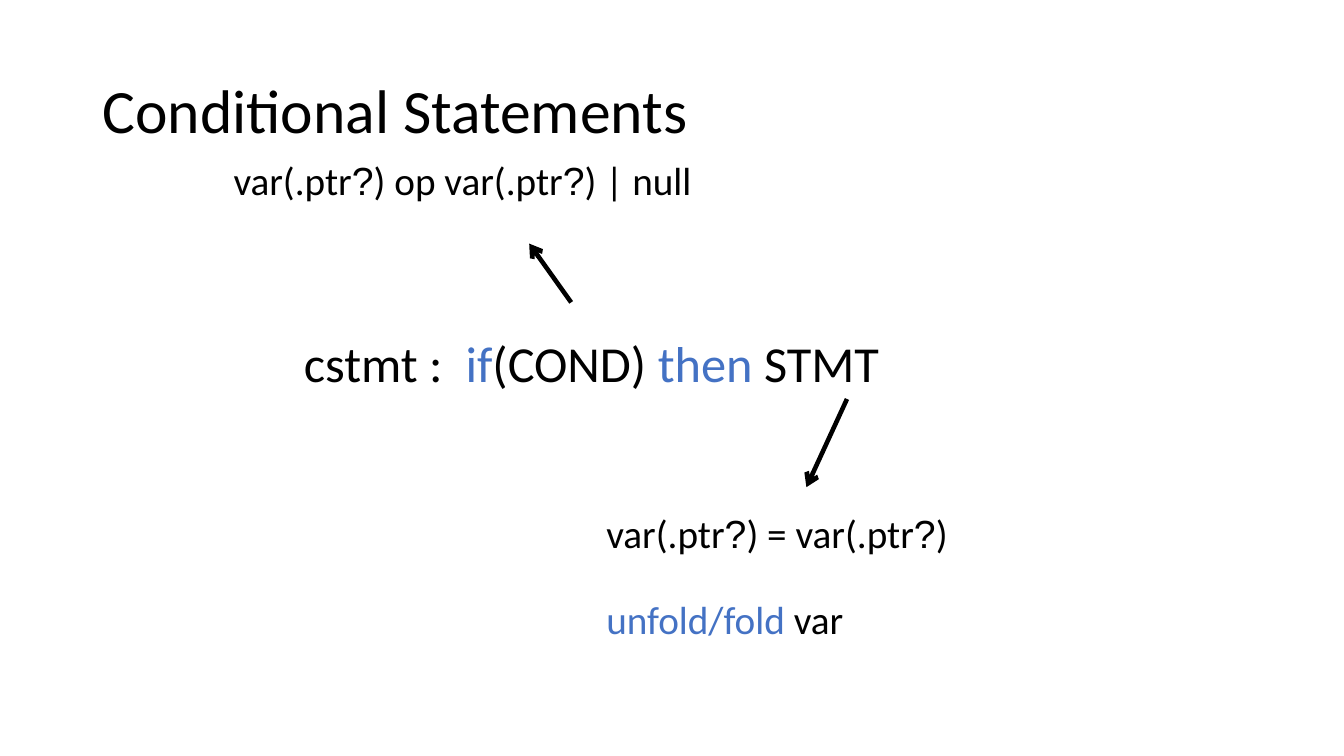
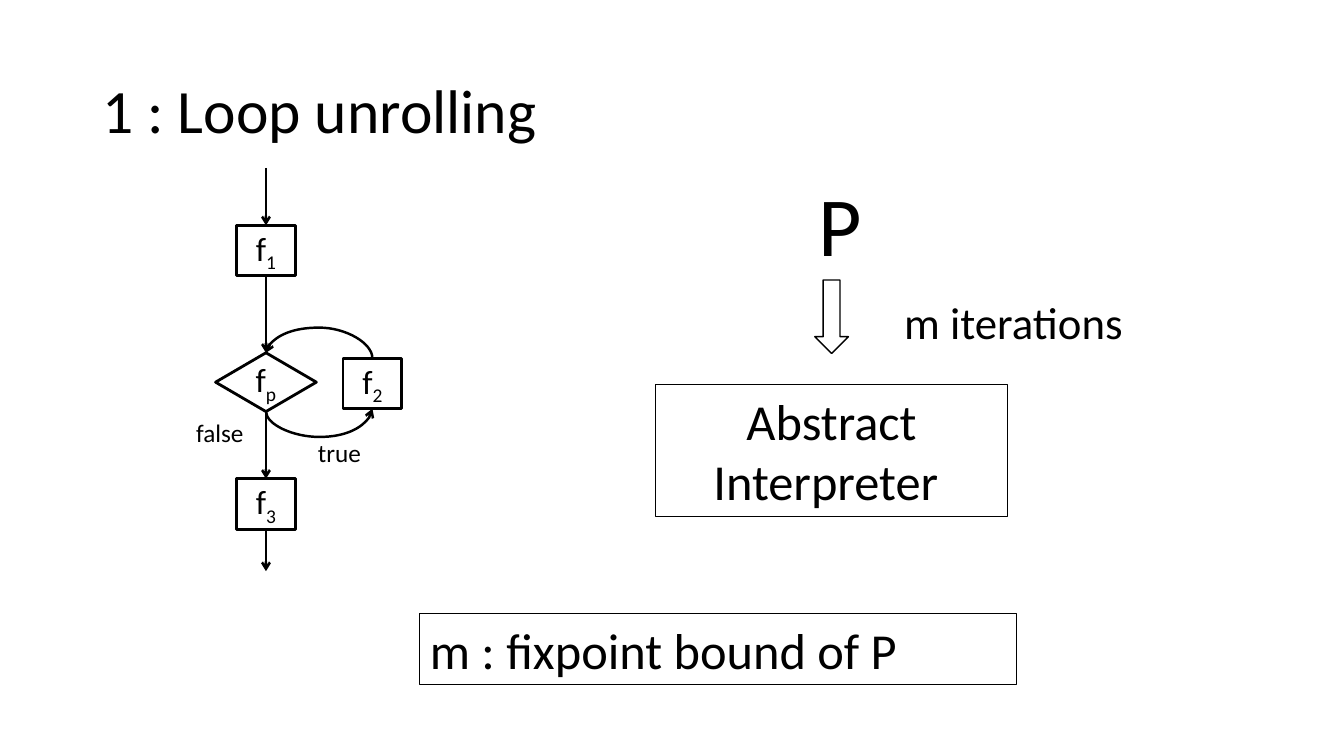
from dataclasses import dataclass

import pptx
import pptx.dml.color
import pptx.enum.shapes
import pptx.enum.text
import pptx.oxml
import pptx.oxml.ns
import pptx.util

Pt = pptx.util.Pt
RGB = pptx.dml.color.RGBColor
Kind = pptx.enum.shapes.MSO_SHAPE
Link = pptx.enum.shapes.MSO_CONNECTOR
Align = pptx.enum.text.PP_ALIGN
Anchor = pptx.enum.text.MSO_ANCHOR
qn = pptx.oxml.ns.qn
TOP, LEFT, BOTTOM, RIGHT = range(4)


@dataclass(frozen=True)
class Theme:
    ink: RGB = RGB(0, 0, 0)
    key: RGB = RGB(0x44, 0x72, 0xC4)
    face: str = "Calibri"
    mark: str = "Arial"
    title: int = 44
    hero: int = 60
    large: int = 36
    mid: int = 32
    body: int = 28
    node: int = 24
    small: int = 18
    bold: float = 3.25
    edge: float = 2
    flow: float = 1.75
    thin: float = 0.75


THEME = Theme()


def put(box, x, y, w, h):
    return [Pt(v) for v in (box[0] + x, box[1] + y, w, h)]


def style(para, size, align=Align.LEFT):
    para.alignment = align
    para.font.name = THEME.face
    para.font.size = Pt(size)
    para.font.color.rgb = THEME.ink


def write(para, runs, size, align):
    style(para, size, align)
    for words, look in runs:
        run = para.add_run()
        run.text = words
        if look == "key":
            run.font.color.rgb = THEME.key
        elif look == "mark":
            run.font.name = THEME.mark
        elif look == "sub":
            run._r.get_or_add_rPr().set("baseline", "-25000")


def plain(words):
    return [(words, None)]


def query(words):
    first, *rest = words.split("?")
    runs = plain(first)
    for part in rest:
        runs += [("?", "mark"), (part, None)]
    return runs


def label(slide, area, runs, size, align=Align.LEFT):
    frame = slide.shapes.add_textbox(*area).text_frame
    frame.word_wrap = True
    write(frame.paragraphs[0], runs, size, align)
    return frame


def block(slide, kind, area, width):
    shape = slide.shapes.add_shape(kind, *area)
    shape.shadow.inherit = False
    shape.fill.background()
    shape.line.color.rgb = THEME.ink
    shape.line.width = Pt(width)
    return shape


def panel(slide, area, words, align):
    shape = block(slide, Kind.RECTANGLE, area, THEME.thin)
    shape.text_frame.word_wrap = True
    write(shape.text_frame.paragraphs[0], plain(words), THEME.large, align)


def node(slide, kind, area, sub):
    shape = block(slide, kind, area, THEME.edge)
    frame = shape.text_frame
    frame.word_wrap = False
    runs = [("f", None), (sub, "sub")]
    write(frame.paragraphs[0], runs, THEME.node, Align.CENTER)
    return shape


def arrow(slide, start, end, width, kind=Link.STRAIGHT):
    line = slide.shapes.add_connector(kind, *[Pt(v) for v in (*start, *end)])
    line.line.color.rgb = THEME.ink
    line.line.width = Pt(width)
    head = pptx.oxml.parse_xml(
        '<a:tailEnd xmlns:a="http://schemas.openxmlformats.org/'
        'drawingml/2006/main" type="arrow"/>')
    props = line._element.spPr
    props.find(qn("a:ln")).append(head)
    props.append(props.makeelement(qn("a:effectLst"), {}))
    return line


def spot(shape, side):
    x = shape.left + shape.width * (0.5, 0, 0.5, 1)[side]
    y = shape.top + shape.height * (0, 0.5, 1, 0.5)[side]
    return x / Pt(1), y / Pt(1)


def join(slide, src, dst):
    line = arrow(slide, spot(src, BOTTOM), spot(dst, TOP), THEME.flow)
    line.begin_connect(src, BOTTOM)
    line.end_connect(dst, TOP)


def bend(slide, src, dst, side, sag):
    (ax, ay), (bx, by) = spot(src, side), spot(dst, side)
    sign = 1 if sag > 0 else -1
    mx, my = (ax + bx) / 2, (ay + by) / 2
    dx, dy = sign * (ax - mx), sign * (ay - my)
    line = arrow(slide, (ax, ay), (bx, by), THEME.flow, Link.CURVE)
    line.begin_connect(src, side)
    line.end_connect(dst, side)
    line.begin_x, line.begin_y = Pt(mx + dy), Pt(my - dx)
    line.end_x, line.end_y = Pt(mx - dy), Pt(my + dx)
    props = line._element.spPr
    turn = 90 if sag > 0 else 270
    props.find(qn("a:xfrm")).set("rot", str(turn * 60000))
    guides = props.find(qn("a:prstGeom")).get_or_add_avLst()
    ratio = round(sag / (by - ay) * 100000)
    guide = {"name": "adj1", "fmla": f"val {ratio}"}
    guides.append(guides.makeelement(qn("a:gd"), guide))


def start(deck, words):
    slide = deck.slides.add_slide(deck.slide_layouts[5])
    title = slide.shapes.title
    area = put((66, 29), 0, 0, 828, 104)
    title.left, title.top, title.width, title.height = area
    frame = title.text_frame
    frame.text = words
    frame.vertical_anchor = Anchor.MIDDLE
    frame.auto_size = pptx.enum.text.MSO_AUTO_SIZE.NONE
    style(frame.paragraphs[0], THEME.title)
    frame.paragraphs[0].line_spacing = 0.9
    return slide


def syntax(slide, box):
    x, y = box
    label(slide, put(box, 84, 126, 546, 51),
          [("cstmt :  ", None), ("if", "key"), ("(COND) ", None),
           ("then", "key"), (" STMT", None)], THEME.large)
    label(slide, put(box, 0, 0, 415, 63),
          query("var(.ptr?) op var(.ptr?) | null "), THEME.body, Align.CENTER)
    frame = label(slide, put(box, 300, 252, 361, 104),
                  query("var(.ptr?) = var(.ptr?)"), THEME.body)
    para = frame.add_paragraph()
    para.space_before = Pt(28)
    write(para, [("unfold/fold ", "key"), ("var", None)],
          THEME.body, Align.LEFT)
    arrow(slide, (x + 282, y + 108), (x + 252, y + 66), THEME.bold)
    arrow(slide, (x + 479, y + 177), (x + 450, y + 240), THEME.bold)


def loop(slide, box):
    x, y = box
    axis, wide, high = 57, 42, 36
    mid = axis - wide / 2
    first, step, last = [
        node(slide, Kind.RECTANGLE, put(box, left, top, wide, high), sub)
        for left, top, sub in ((mid, 41, "1"), (112, 136, "2"),
                               (mid, 222, "3"))]
    test = node(slide, Kind.DIAMOND, put(box, axis - 36, 132, 72, 42), "p")
    entry = arrow(slide, (x + axis, y), spot(first, TOP), THEME.flow)
    entry.end_connect(first, TOP)
    leave = arrow(slide, spot(last, BOTTOM), (x + axis, y + 288), THEME.flow)
    leave.begin_connect(last, BOTTOM)
    join(slide, first, test)
    join(slide, test, last)
    bend(slide, step, test, TOP, -22)
    bend(slide, test, step, BOTTOM, 18)
    for left, top, words in ((87, 189, "true"), (0, 174.5, "false")):
        label(slide, put(box, left, top, 72, 29), plain(words), THEME.small)


def proof(slide, box):
    panel(slide, put(box, 168, 154.5, 252, 94.5),
          "Abstract Interpreter ", Align.CENTER)
    label(slide, put(box, 174, 0, 252, 80), plain("P"),
          THEME.hero, Align.CENTER)
    block(slide, Kind.DOWN_ARROW, put(box, 282, 80, 24, 52.5), 1)
    label(slide, put(box, 298, 87, 252, 46), plain("m iterations"),
          THEME.mid, Align.CENTER)
    panel(slide, put(box, 0, 318, 426, 51),
          "m : fixpoint bound of P", Align.LEFT)


def main():
    deck = pptx.Presentation()
    deck.slide_width, deck.slide_height = Pt(960), Pt(540)
    syntax(start(deck, "Conditional Statements"), (126, 108))
    slide = start(deck, "1 : Loop unrolling")
    loop(slide, (133, 120))
    proof(slide, (300, 120))
    deck.save("out.pptx")


if __name__ == "__main__":
    main()
